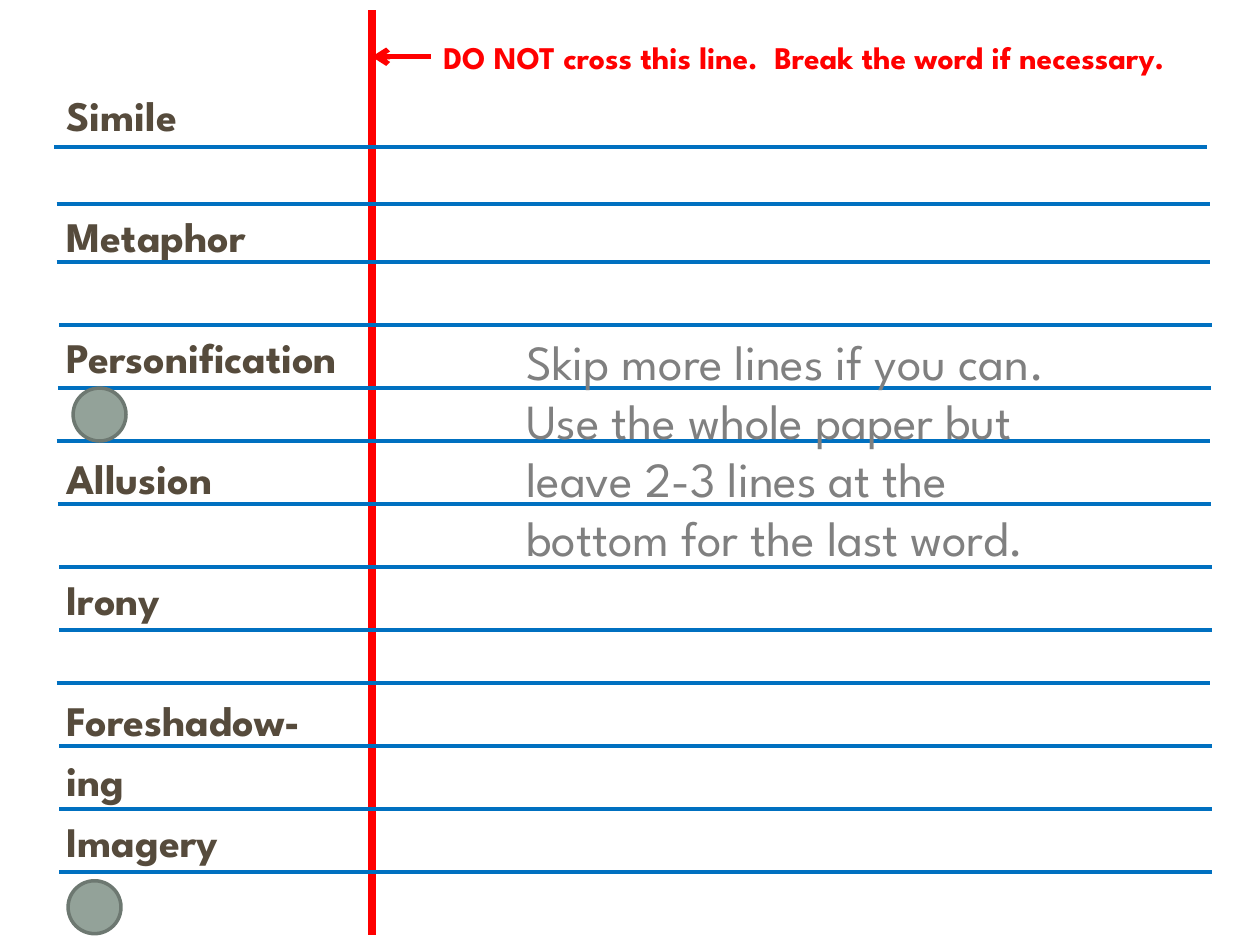
from lxml.etree import SubElement
from pptx import Presentation
from pptx.dml.color import RGBColor
from pptx.enum.shapes import MSO_CONNECTOR, MSO_SHAPE
from pptx.enum.text import MSO_ANCHOR
from pptx.oxml.ns import qn
from pptx.util import Inches, Pt

FONT = "League Spartan"
BROWN = RGBColor(0x56, 0x4B, 0x3C)
RED = RGBColor(0xFF, 0x00, 0x00)
BLUE = RGBColor(0x00, 0x70, 0xC0)
GREY = RGBColor(0x80, 0x80, 0x80)
SAGE = RGBColor(0x93, 0xA2, 0x99)
DARK_SAGE = RGBColor(0x6D, 0x78, 0x71)

TERM_FORMAT = {"size": Pt(24), "bold": True, "color": BROWN}
WARNING_FORMAT = {"size": Pt(18), "bold": True, "color": RED}
ADVICE_FORMAT = {"size": Pt(28), "bold": False, "color": GREY}

# Each term with the number of ruled rows skipped after it
TERMS = [("Simile", 1), ("Metaphor", 1), ("Personification", 1), ("Allusion", 1),
         ("Irony", 1), ("Foreshadow-", 0), ("ing", 0), ("Imagery", 0)]
ROW_HEIGHT = 34.56

# Left end of the ruled lines, with their heights on the page
RULES = {0.43: [1.17], 0.45: [1.62, 2.08, 3.5, 5.42], 0.46: [3.08, 4],
         0.47: [2.58, 4.5, 5, 5.92, 6.42, 6.92]}
RULE_LENGTH = 9.15
MARGIN_X = 2.95
HOLE_SIZE = 0.42
HOLES = [(0.58, 3.08), (0.54, 6.99)]


def add_text(slide, box, lines, text_format, wrap=True):
    """Add a text box and return its text frame."""
    frame = slide.shapes.add_textbox(*map(Inches, box)).text_frame
    frame.word_wrap = wrap
    for index, line in enumerate(lines):
        paragraph = frame.paragraphs[0] if index == 0 else frame.add_paragraph()
        run = paragraph.add_run()
        run.text = line
        run.font.name = FONT
        for name, value in text_format.items():
            if name == "color":
                run.font.color.rgb = value
            else:
                setattr(run.font, name, value)
    return frame


def add_line(slide, start, end, color, width, arrow=False):
    """Add a straight line, with an arrowhead at its end if asked."""
    connector = slide.shapes.add_connector(
        MSO_CONNECTOR.STRAIGHT, *map(Inches, start + end))
    connector.line.color.rgb = color
    connector.line.width = Pt(width)
    properties = connector._element.spPr
    if arrow:
        SubElement(properties.find(qn("a:ln")), qn("a:tailEnd"), type="arrow")
    SubElement(properties, qn("a:effectLst"))


def add_hole(slide, left, top):
    """Add one punched hole of the paper."""
    hole = slide.shapes.add_shape(
        MSO_SHAPE.OVAL, *map(Inches, (left, top, HOLE_SIZE, HOLE_SIZE)))
    hole.shadow.inherit = False
    hole.fill.solid()
    hole.fill.fore_color.rgb = SAGE
    hole.line.color.rgb = DARK_SAGE
    hole.line.width = Pt(2)


def add_terms(slide):
    """Add the list of terms, spaced to the ruled rows."""
    frame = add_text(slide, (0.43, 0.25, 9.18, 7), [term for term, _ in TERMS], TERM_FORMAT)
    frame.vertical_anchor = MSO_ANCHOR.MIDDLE
    for paragraph, (_, skipped) in zip(frame.paragraphs, TERMS):
        paragraph.line_spacing = 1.2
        paragraph.space_after = Pt(skipped * ROW_HEIGHT)


def main():
    presentation = Presentation()
    presentation.slide_width = Inches(10)
    presentation.slide_height = Inches(7.5)
    slide = presentation.slides.add_slide(presentation.slide_layouts[6])

    # Notebook paper
    add_terms(slide)
    add_line(slide, (MARGIN_X, 0.08), (MARGIN_X, 7.42), RED, 4.5)
    for left, heights in RULES.items():
        for height in heights:
            add_line(slide, (left, height), (left + RULE_LENGTH, height), BLUE, 2.25)

    # Warning at the margin line
    add_text(slide, (3.42, 0.25, 6.48, 0.4),
             ["DO NOT cross this line.  Break the word if necessary."],
             WARNING_FORMAT, wrap=False)
    add_line(slide, (3.42, 0.45), (MARGIN_X, 0.45), RED, 3, arrow=True)

    # Punched holes
    for left, top in HOLES:
        add_hole(slide, left, top)

    # Advice on spacing
    add_text(slide, (4.08, 2.58, 4.5, 2.46),
             ["Skip more lines if you can.  Use the whole paper but leave 2-3 lines "
              "at the bottom for the last word."], ADVICE_FORMAT)

    presentation.save("out.pptx")


main()
